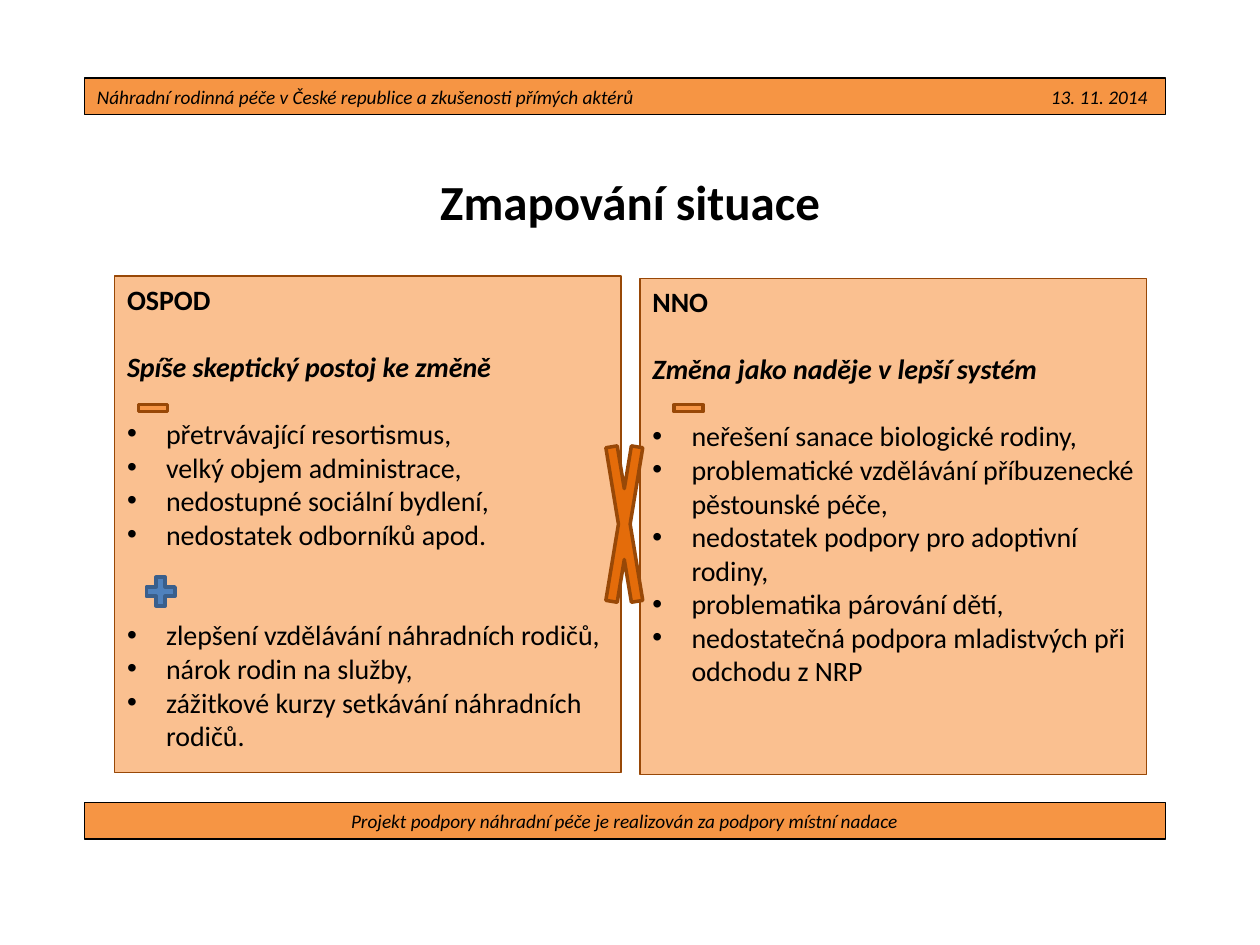
from dataclasses import dataclass

from lxml import etree
from pptx import Presentation
from pptx.dml.color import RGBColor
from pptx.enum import shapes, text
from pptx.oxml import ns
from pptx.util import Inches, Pt


@dataclass(frozen=True)
class Theme:
    font: str = "Calibri"
    ink: str = "000000"
    bar: str = "F69544"
    panel: str = "FAC090"
    brown: str = "984807"
    minus: str = "F79646"
    plus: str = "4F81BD"
    plus_line: str = "3A5F8C"
    cross: str = "E46C0A"
    title_size: int = 28
    body_size: int = 16
    bar_size: int = 11
    blank_line: float = 19.2


THEME = Theme()
SHAPE = shapes.MSO_SHAPE
ALIGN = text.PP_ALIGN


def add_box(slide, kind, box, fill, line, line_width):
    shape = slide.shapes.add_shape(kind, *map(Inches, box))
    shape.shadow.inherit = False
    shape.fill.solid()
    shape.fill.fore_color.rgb = RGBColor.from_string(fill)
    shape.line.color.rgb = RGBColor.from_string(line)
    shape.line.width = Pt(line_width)
    return shape


def set_frame(shape, anchor, side=0.1, top=0.05):
    frame = shape.text_frame
    frame.word_wrap = True
    frame.vertical_anchor = anchor
    frame.margin_left = frame.margin_right = Inches(side)
    frame.margin_top = frame.margin_bottom = Inches(top)
    return frame


def write(paragraph, words, size, bold=False, italic=False, align=ALIGN.LEFT):
    paragraph.text = words
    paragraph.alignment = align
    font = paragraph.font
    font.name, font.size = THEME.font, Pt(size)
    font.bold, font.italic = bold, italic
    font.color.rgb = RGBColor.from_string(THEME.ink)


def add_bullet(paragraph, indent=0.31):
    properties = paragraph._p.get_or_add_pPr()
    properties.set("marL", str(Inches(indent)))
    properties.set("indent", str(-Inches(indent)))
    bullet_font = etree.Element(ns.qn("a:buFont"), typeface="Arial")
    bullet = etree.Element(ns.qn("a:buChar"), char="•")
    defaults = properties.find(ns.qn("a:defRPr"))
    defaults.addprevious(bullet_font)
    defaults.addprevious(bullet)


def add_right_tab(paragraph, position):
    properties = paragraph._p.get_or_add_pPr()
    tabs = etree.Element(ns.qn("a:tabLst"))
    etree.SubElement(tabs, ns.qn("a:tab"), pos=str(Inches(position)), algn="r")
    properties.find(ns.qn("a:defRPr")).addprevious(tabs)


def add_bar(slide, box, words, align):
    bar = add_box(slide, SHAPE.RECTANGLE, box, THEME.bar, THEME.ink, 0.75)
    frame = set_frame(bar, text.MSO_ANCHOR.MIDDLE, top=0)
    write(frame.paragraphs[0], words, THEME.bar_size, italic=True, align=align)
    return frame


def add_header(slide, box, heading, date):
    frame = add_bar(slide, box, f"{heading}\t{date}", ALIGN.LEFT)
    frame.margin_right = Inches(0.05)
    add_right_tab(frame.paragraphs[0], box[2] - 0.24)


def add_title(slide, box, words):
    title = slide.shapes.add_textbox(*map(Inches, box))
    frame = set_frame(title, text.MSO_ANCHOR.TOP)
    write(frame.paragraphs[0], words, THEME.title_size, bold=True, align=ALIGN.CENTER)


def add_panel(slide, box, heading, attitude, groups):
    """Heading and attitude, then bullet groups as (blank lines above, items)."""
    panel = add_box(slide, SHAPE.RECTANGLE, box, THEME.panel, THEME.brown, 0.75)
    frame = set_frame(panel, text.MSO_ANCHOR.TOP)
    write(frame.paragraphs[0], heading, THEME.body_size, bold=True)
    paragraph = frame.add_paragraph()
    write(paragraph, attitude, THEME.body_size, bold=True, italic=True)
    paragraph.space_before = Pt(THEME.blank_line)
    for blank_lines, items in groups:
        for index, item in enumerate(items):
            paragraph = frame.add_paragraph()
            write(paragraph, item, THEME.body_size)
            if index == 0:
                paragraph.space_before = Pt(blank_lines * THEME.blank_line)
            add_bullet(paragraph)


def add_signs(slide):
    for left in (1.06, 5.31):
        add_box(slide, SHAPE.MATH_MINUS, (left, 3.12, 0.31, 0.24),
                THEME.minus, THEME.brown, 2)
    add_box(slide, SHAPE.MATH_PLUS, (1.12, 4.54, 0.31, 0.31),
            THEME.plus, THEME.plus_line, 2)
    add_box(slide, SHAPE.MATH_MULTIPLY, (4.76, 2.98, 0.39, 2.36),
            THEME.cross, THEME.brown, 2)


def main():
    presentation = Presentation()
    presentation.slide_width, presentation.slide_height = Inches(10), Inches(7.5)
    slide = presentation.slides.add_slide(presentation.slide_layouts[6])

    # Header, footer and title
    add_header(slide, (0.67, 0.62, 8.58, 0.29),
               "Náhradní rodinná péče v České republice a zkušenosti přímých aktérů",
               "13. 11. 2014")
    add_bar(slide, (0.67, 6.37, 8.58, 0.29),
            "Projekt podpory náhradní péče je realizován za podpory místní nadace",
            ALIGN.CENTER)
    add_title(slide, (1.14, 1.31, 7.72, 0.57), "Zmapování situace")

    # Two facing panels
    add_panel(slide, (0.91, 2.19, 4.02, 3.94), "OSPOD",
              "Spíše skeptický postoj ke změně", [
                  (1, ["přetrvávající resortismus,",
                       "velký objem administrace,",
                       "nedostupné sociální bydlení,",
                       "nedostatek odborníků apod."]),
                  (2, ["zlepšení vzdělávání náhradních rodičů,",
                       "nárok rodin na služby,",
                       "zážitkové kurzy setkávání náhradních rodičů."]),
              ])
    add_panel(slide, (5.08, 2.21, 4.02, 3.94), "NNO",
              "Změna jako naděje v lepší systém", [
                  (1, ["neřešení sanace biologické rodiny,",
                       "problematické vzdělávání příbuzenecké pěstounské péče,",
                       "nedostatek podpory pro adoptivní rodiny,",
                       "problematika párování dětí,",
                       "nedostatečná podpora mladistvých při odchodu z NRP"]),
              ])

    # Minus, plus and cross signs
    add_signs(slide)
    presentation.save("out.pptx")


if __name__ == "__main__":
    main()
